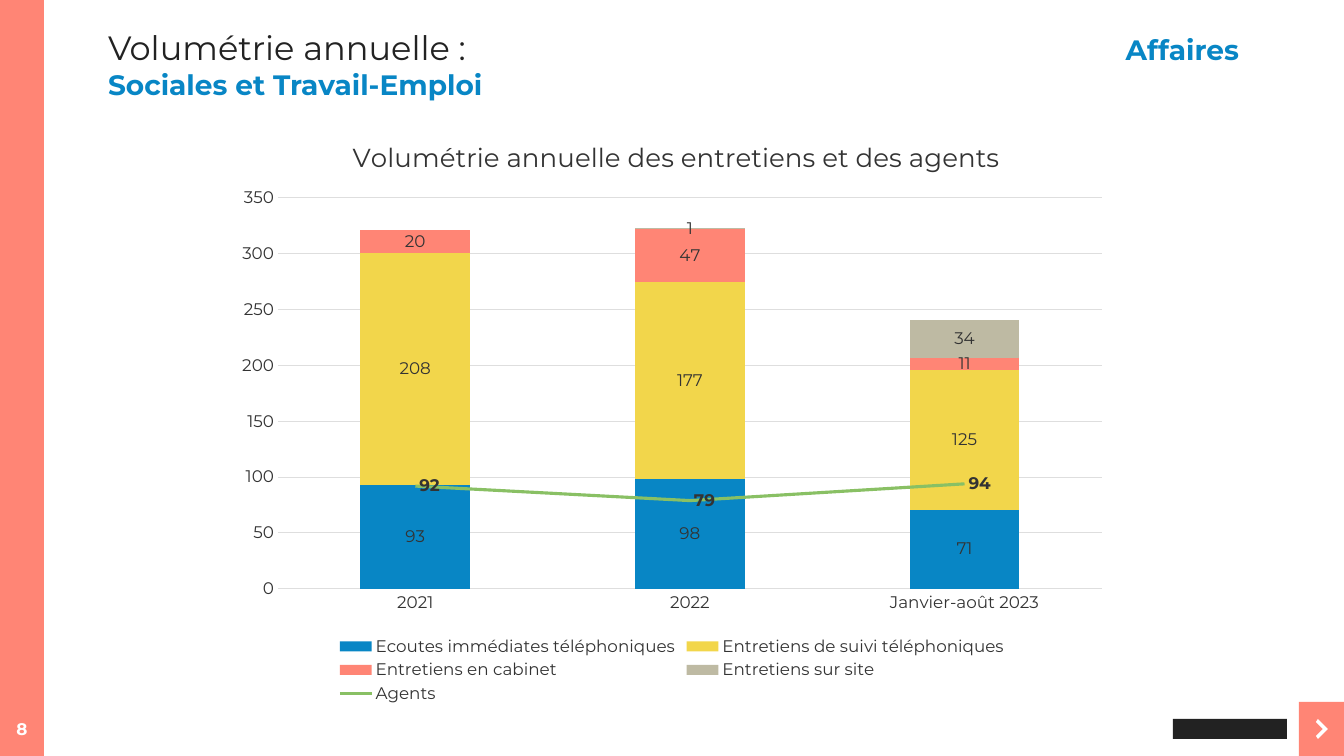
from lxml import etree
from pptx import Presentation
from pptx.chart.data import CategoryChartData
from pptx.dml.color import RGBColor
from pptx.enum.chart import (XL_CHART_TYPE, XL_LABEL_POSITION, XL_LEGEND_POSITION,
                             XL_MARKER_STYLE, XL_TICK_MARK)
from pptx.enum.shapes import MSO_SHAPE
from pptx.enum.text import MSO_ANCHOR, MSO_AUTO_SIZE, PP_ALIGN
from pptx.oxml import parse_xml
from pptx.oxml.ns import nsdecls, qn
from pptx.util import Pt

STACKED = XL_CHART_TYPE.COLUMN_STACKED
BOTTOM = XL_LEGEND_POSITION.BOTTOM
LABEL_CENTER, LABEL_RIGHT = XL_LABEL_POSITION.CENTER, XL_LABEL_POSITION.RIGHT
NO_TICK, NO_MARKER = XL_TICK_MARK.NONE, XL_MARKER_STYLE.NONE
RECT = MSO_SHAPE.RECTANGLE
TOP, MIDDLE = MSO_ANCHOR.TOP, MSO_ANCHOR.MIDDLE
LEFT, CENTER = PP_ALIGN.LEFT, PP_ALIGN.CENTER
NO_FIT = MSO_AUTO_SIZE.NONE

FONT = "Montserrat"
CORAL = RGBColor(0xFF, 0x85, 0x75)
BLUE = RGBColor(0x08, 0x86, 0xC5)
YELLOW = RGBColor(0xF2, 0xD6, 0x4B)
TAUPE = RGBColor(0xBE, 0xBA, 0xA3)
GREEN = RGBColor(0x89, 0xC0, 0x64)
INK = RGBColor(0x22, 0x22, 0x22)
GREY = RGBColor(0x33, 0x33, 0x33)
GRID = RGBColor(0xDE, 0xDE, 0xDE)
WHITE = RGBColor(0xFF, 0xFF, 0xFF)

YEARS = ["2021", "2022", "Janvier-août 2023"]
INTERVIEWS = [
    ("Ecoutes immédiates téléphoniques", (93, 98, 71), BLUE),
    ("Entretiens de suivi téléphoniques", (208, 177, 125), YELLOW),
    ("Entretiens en cabinet", (20, 47, 11), CORAL),
    ("Entretiens sur site", (0, 1, 34), TAUPE),
]
AGENTS = ("Agents", (92, 79, 94), GREEN)


def px(n):
    return round(n * 914400 / 100.8)


def style(font, size, color=GREY, bold=False):
    font.name, font.size, font.bold = FONT, Pt(size), bold
    font.color.rgb = color


def paint(sp, color):
    sp.fill.solid()
    sp.fill.fore_color.rgb = color
    sp.line.fill.background()
    sp.shadow.inherit = False


def add_rect(slide, x, y, w, h, color):
    paint(slide.shapes.add_shape(RECT, px(x), px(y), px(w), px(h)), color)


def add_side_band(slide, x, y, w, h):
    """Coral band with the page number near its foot."""
    add_rect(slide, x, y, w, h, CORAL)
    sp = slide.shapes.add_textbox(px(x), px(y + h - 47), px(w), px(40))
    tf = sp.text_frame
    tf.text = "8"
    tf.word_wrap = False
    tf.vertical_anchor = MIDDLE
    p = tf.paragraphs[0]
    p.alignment = CENTER
    style(p.runs[0].font, 12, WHITE, True)


def add_corner(slide, x, y, w, h):
    """Coral corner with a chevron, and a plain block to its left."""
    add_rect(slide, x, y, w, h, CORAL)
    add_rect(slide, x - 126, y + 17, 114, 20, INK)
    chevron = [(17, 20), (24, 27), (17, 34), (19, 37), (29, 27), (19, 17)]
    points = [(px(x + dx), px(y + dy)) for dx, dy in chevron]
    fb = slide.shapes.build_freeform(*points[0], scale=1.0)
    fb.add_line_segments(points[1:], close=True)
    paint(fb.convert_to_shape(), WHITE)


def add_title(slide, x, y, w, h):
    sp = slide.shapes.title
    sp.left, sp.top, sp.width, sp.height = px(x), px(y), px(w), px(h)
    tf = sp.text_frame
    tf.auto_size, tf.word_wrap, tf.vertical_anchor = NO_FIT, True, TOP
    lines = [[("Volumétrie annuelle :\t", 24, INK, False), ("Affaires", 20, BLUE, True)],
             [("Sociales et Travail-Emploi", 20, BLUE, True)]]
    for i, line in enumerate(lines):
        p = tf.add_paragraph() if i else tf.paragraphs[0]
        p.alignment, p.line_spacing, p.space_before = LEFT, 1.0, Pt(0)
        for text, *look in line:
            r = p.add_run()
            r.text = text
            style(r.font, *look)
    tabs = etree.SubElement(tf.paragraphs[0]._p.get_or_add_pPr(), qn("a:tabLst"))
    etree.SubElement(tabs, qn("a:tab"), pos=str(px(w - 22)), algn="r")


def set_layout(element, successors, inner=False, **fractions):
    """Place a chart part by fractions of the chart's size."""
    for old in element.findall(qn("c:layout")):
        element.remove(old)
    target = '<c:layoutTarget val="inner"/>' if inner else ""
    modes = "".join(f'<c:{k}Mode val="edge"/>' for k in "xy")
    values = "".join(f'<c:{k} val="{v:.4f}"/>' for k, v in fractions.items())
    layout = parse_xml(f'<c:layout {nsdecls("c")}><c:manualLayout>{target}{modes}{values}'
                       '</c:manualLayout></c:layout>')
    after = next((e for e in element if e.tag in [qn(s) for s in successors]), None)
    if after is None:
        element.append(layout)
    else:
        after.addprevious(layout)


def move_last_series_to_line(chart):
    bar = chart.plots[0]._element
    ser = bar.findall(qn("c:ser"))[-1]
    for bar_only in ser.findall(qn("c:invertIfNegative")):
        ser.remove(bar_only)
    line = parse_xml(f'<c:lineChart {nsdecls("c")}><c:grouping val="standard"/>'
                     '<c:varyColors val="0"/></c:lineChart>')
    line.append(ser)
    etree.SubElement(line, qn("c:marker"), val="1")
    for axis in bar.findall(qn("c:axId")):
        etree.SubElement(line, qn("c:axId"), val=str(axis.get("val")))
    bar.addnext(line)


def label(series, position, bold=False):
    labels = series.data_labels
    labels.show_value = True
    labels.number_format, labels.number_format_is_linked = "0;;", False
    labels.position = position
    style(labels.font, 12, bold=bold)


def format_axes(chart):
    years, counts = chart.category_axis, chart.value_axis
    for axis in (years, counts):
        axis.major_tick_mark = axis.minor_tick_mark = NO_TICK
        style(axis.tick_labels.font, 12)
    counts.minimum_scale, counts.maximum_scale, counts.major_unit = 0, 350, 50
    counts.format.line.fill.background()
    for line in (years.format.line, counts.major_gridlines.format.line):
        line.color.rgb, line.width = GRID, Pt(0.75)


def add_volume_chart(slide, x, y, w, h):
    data = CategoryChartData()
    data.categories = YEARS
    for name, values, _ in INTERVIEWS + [AGENTS]:
        data.add_series(name, values)
    chart = slide.shapes.add_chart(STACKED, px(x), px(y), px(w), px(h), data).chart
    style(chart.font, 10)
    move_last_series_to_line(chart)

    columns, line = chart.plots
    columns.gap_width, columns.overlap, columns.vary_by_categories = 150, 100, False
    for series, (_, _, color) in zip(columns.series, INTERVIEWS):
        series.format.fill.solid()
        series.format.fill.fore_color.rgb = color
        label(series, LABEL_CENTER)
    agents = line.series[0]
    agents.smooth, agents.marker.style = False, NO_MARKER
    agents.format.line.color.rgb, agents.format.line.width = AGENTS[2], Pt(2.25)
    label(agents, LABEL_RIGHT, True)
    format_axes(chart)

    chart.has_title = True
    title = chart.chart_title
    title.text_frame.text = "Volumétrie annuelle des entretiens et des agents"
    style(title.text_frame.paragraphs[0].runs[0].font, 18.6)
    chart.has_legend = True
    chart.legend.position, chart.legend.include_in_layout = BOTTOM, False
    style(chart.legend.font, 12)

    set_layout(title._element, ["c:overlay", "c:spPr", "c:txPr"], x=124 / w, y=24 / h)
    set_layout(chart.legend._element, ["c:overlay", "c:spPr", "c:txPr"],
               x=110 / w, y=522 / h, w=676 / w, h=74 / h)
    plot_area = columns._element.getparent()
    set_layout(plot_area, ["c:barChart"], True,
               x=54 / w, y=87 / h, w=824 / w, h=391 / h)


def main():
    prs = Presentation()
    prs.slide_width, prs.slide_height = px(1344), px(756)
    slide = prs.slides.add_slide(prs.slide_layouts[5])
    add_side_band(slide, 0, 0, 44, 756)
    add_corner(slide, 1299, 702, 45, 54)
    add_title(slide, 98, 22, 1153, 89)
    add_volume_chart(slide, 224, 111, 896, 598)
    prs.save("out.pptx")


if __name__ == "__main__":
    main()
